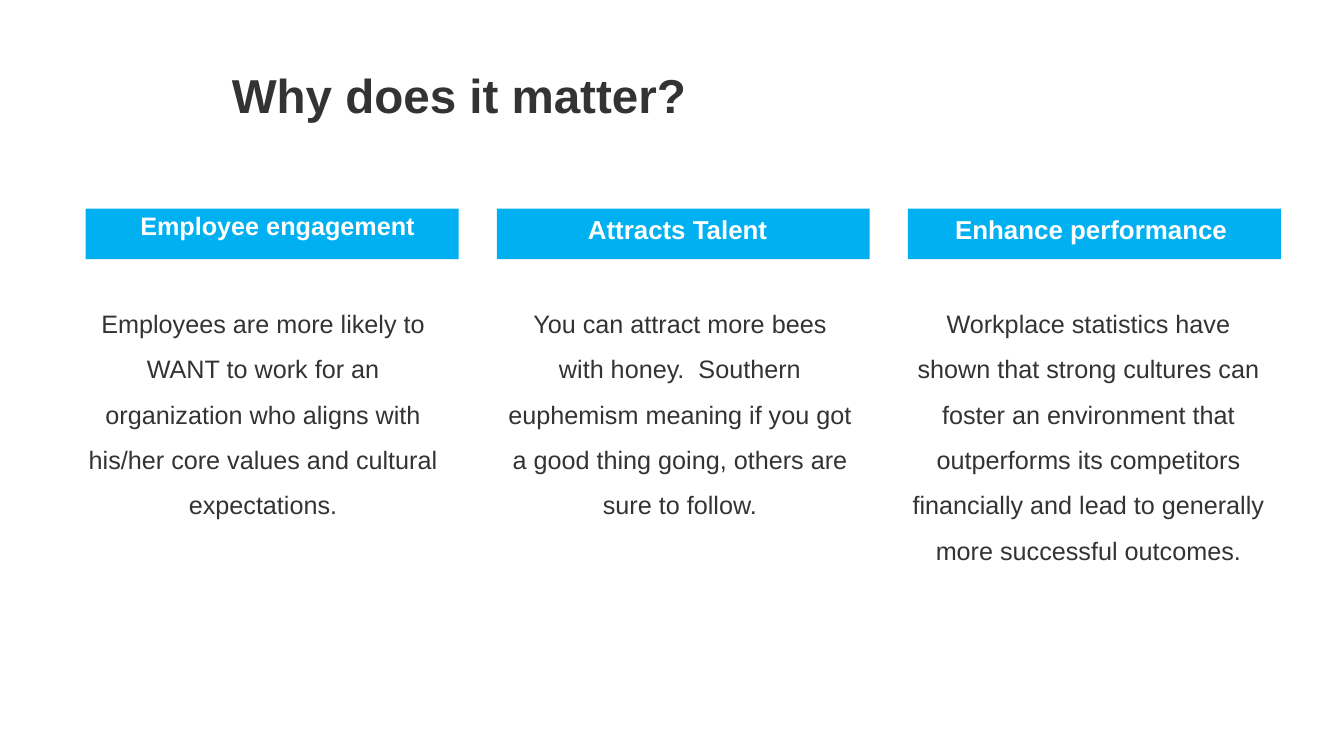
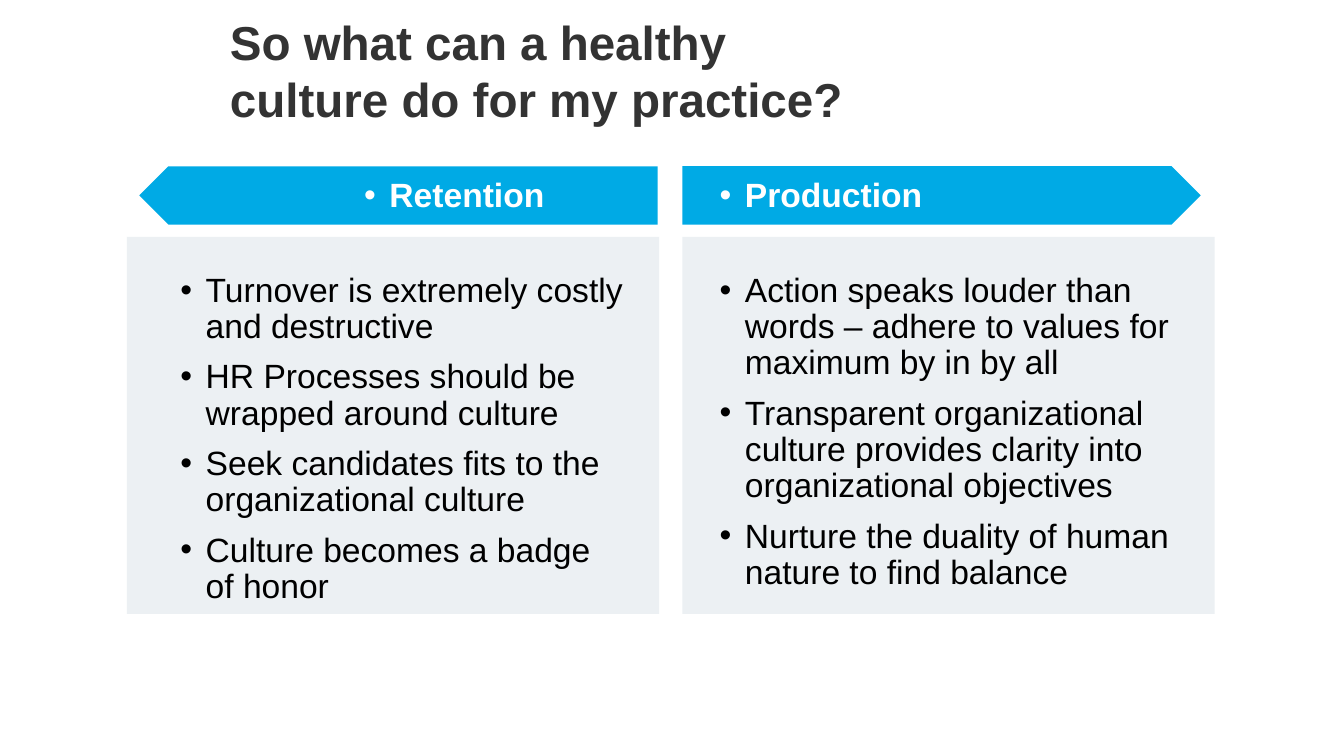
from dataclasses import dataclass
from lxml.etree import SubElement
from pptx import Presentation
from pptx.dml.color import RGBColor
from pptx.enum.shapes import MSO_SHAPE
from pptx.enum.text import MSO_ANCHOR, MSO_AUTO_SIZE, PP_ALIGN
from pptx.oxml.ns import qn
from pptx.shapes.base import BaseShape
from pptx.slide import Slide
from pptx.text.text import TextFrame
from pptx.util import Cm, Pt

FONT = "Arial"
HUES = {
    "ink": "333333",
    "black": "000000",
    "white": "FFFFFF",
    "band": "00B0F0",
    "plate": "00AAE5",
    "panel": "ECF0F3",
}


@dataclass(frozen=True)
class Box:
    left: float
    top: float
    width: float
    height: float


@dataclass(frozen=True)
class Style:
    size: float
    hue: str
    bold: bool = False
    align: PP_ALIGN = PP_ALIGN.LEFT
    anchor: MSO_ANCHOR = MSO_ANCHOR.TOP
    lead: float = 1.0
    gap: float = 0
    bullet: bool = False


@dataclass(frozen=True)
class Column:
    head: str
    text: str
    head_box: Box
    text_box: Box
    style: Style


@dataclass(frozen=True)
class Side:
    head: str
    points: list[str]
    plate: Box
    turn: int
    panel: Box
    head_box: Box
    list_box: Box


TITLE = Style(34, "ink", bold=True, anchor=MSO_ANCHOR.BOTTOM)
PROSE = Style(18, "ink", align=PP_ALIGN.CENTER, lead=1.5)
FIRST = Style(18, "white", True, PP_ALIGN.CENTER, MSO_ANCHOR.MIDDLE, 0.9)
OTHER = Style(18.5, "white", True, PP_ALIGN.CENTER, MSO_ANCHOR.MIDDLE, 0.7)
HEAD = Style(24, "white", bold=True, lead=0.9, bullet=True)
POINTS = Style(24, "black", lead=0.9, gap=10, bullet=True)

BAND = Box(2.16, 5.26, 9.4, 1.27)
STEP = 10.36

COLUMNS = [
    Column(
        "Employee engagement",
        "Employees are more likely to WANT to work for an organization "
        "who aligns with his/her core values and cultural expectations.",
        Box(3.06, 5.13, 7.87, 1.22), Box(1.93, 7.26, 9.4, 6.05), FIRST,
    ),
    Column(
        "Attracts Talent",
        "You can attract more bees with honey.  Southern euphemism meaning "
        "if you got a good thing going, others are sure to follow.",
        Box(13.14, 5.26, 7.87, 1.22), Box(12.55, 7.26, 9.17, 6.05), OTHER,
    ),
    Column(
        "Enhance performance",
        "Workplace statistics have shown that strong cultures can foster an "
        "environment that outperforms its competitors financially and lead "
        "to generally more successful outcomes.",
        Box(23.56, 5.26, 7.87, 1.22), Box(22.73, 7.26, 9.4, 8.41), OTHER,
    ),
]

SIDES = [
    Side(
        "Retention",
        [
            "Turnover is extremely costly and destructive",
            "HR Processes should be wrapped around culture",
            "Seek candidates fits to the organizational culture",
            "Culture becomes a badge of honor",
        ],
        Box(3.51, 4.19, 13.06, 1.47), 180, Box(3.2, 5.97, 13.41, 9.5),
        Box(8.92, 4.37, 7.04, 0.69), Box(4.29, 6.76, 11.66, 8.31),
    ),
    Side(
        "Production",
        [
            "Action speaks louder than words – adhere to values for maximum "
            "by in by all",
            "Transparent organizational culture provides clarity into "
            "organizational objectives",
            "Nurture the duality of human nature to find balance",
        ],
        Box(17.2, 4.19, 13.06, 1.47), 0, Box(17.2, 5.97, 13.41, 9.5),
        Box(17.88, 4.37, 7.04, 0.69), Box(17.88, 6.76, 12.37, 8.31),
    ),
]


def paint(name: str) -> RGBColor:
    return RGBColor.from_string(HUES[name])


def spots(box: Box) -> tuple[Cm, Cm, Cm, Cm]:
    return Cm(box.left), Cm(box.top), Cm(box.width), Cm(box.height)


def write(frame: TextFrame, lines: list[str], style: Style) -> None:
    frame.word_wrap = True
    frame.auto_size = MSO_AUTO_SIZE.NONE
    frame.vertical_anchor = style.anchor
    for count, line in enumerate(lines):
        para = frame.add_paragraph() if count else frame.paragraphs[0]
        para.alignment = style.align
        para.line_spacing = style.lead
        para.space_before = Pt(style.gap if count else 0)
        para.space_after = Pt(0)
        if style.bullet:
            props = para._p.get_or_add_pPr()
            props.set("marL", str(Cm(0.64)))
            props.set("indent", str(Cm(-0.64)))
            SubElement(props, qn("a:buFont")).set("typeface", FONT)
            SubElement(props, qn("a:buChar")).set("char", "•")
        run = para.add_run()
        run.text = line
        run.font.name = FONT
        run.font.size = Pt(style.size)
        run.font.bold = style.bold
        run.font.color.rgb = paint(style.hue)


def fill(holder: BaseShape, box: Box, lines: list[str], style: Style) -> None:
    holder.left, holder.top, holder.width, holder.height = spots(box)
    write(holder.text_frame, lines, style)


def label(slide: Slide, box: Box, text: str, style: Style) -> None:
    write(slide.shapes.add_textbox(*spots(box)).text_frame, [text], style)


def block(slide: Slide, kind: MSO_SHAPE, box: Box, hue: str, turn: int = 0) -> None:
    shape = slide.shapes.add_shape(kind, *spots(box))
    shape.shadow.inherit = False
    shape.fill.solid()
    shape.fill.fore_color.rgb = paint(hue)
    shape.line.fill.background()
    shape.rotation = turn
    slide.shapes._spTree.insert(2, shape._element)


def reasons(deck: Presentation) -> None:
    slide = deck.slides.add_slide(deck.slide_layouts.get_by_name("Title Only"))
    fill(slide.shapes.title, Box(5.59, 0.05, 22.86, 3.18),
         ["Why does it matter?"], TITLE)
    for count, col in enumerate(COLUMNS):
        band = Box(BAND.left + count * STEP, BAND.top, BAND.width, BAND.height)
        block(slide, MSO_SHAPE.RECTANGLE, band, "band")
        label(slide, col.head_box, col.head, col.style)
        label(slide, col.text_box, col.text, PROSE)


def gains(deck: Presentation) -> None:
    slide = deck.slides.add_slide(deck.slide_layouts.get_by_name("Comparison"))
    fill(slide.shapes.title, Box(5.54, 0.15, 16.89, 3.18),
         ["So what can a healthy culture do for my practice?"], TITLE)
    slots = list(slide.placeholders)[1:]
    for side, head, body in zip(SIDES, slots[::2], slots[1::2]):
        block(slide, MSO_SHAPE.PENTAGON, side.plate, "plate", side.turn)
        block(slide, MSO_SHAPE.RECTANGLE, side.panel, "panel")
        fill(head, side.head_box, [side.head], HEAD)
        fill(body, side.list_box, side.points, POINTS)


def main() -> None:
    deck = Presentation()
    deck.slide_width, deck.slide_height = Cm(33.87), Cm(19.05)
    reasons(deck)
    gains(deck)
    deck.save("out.pptx")


if __name__ == "__main__":
    main()
